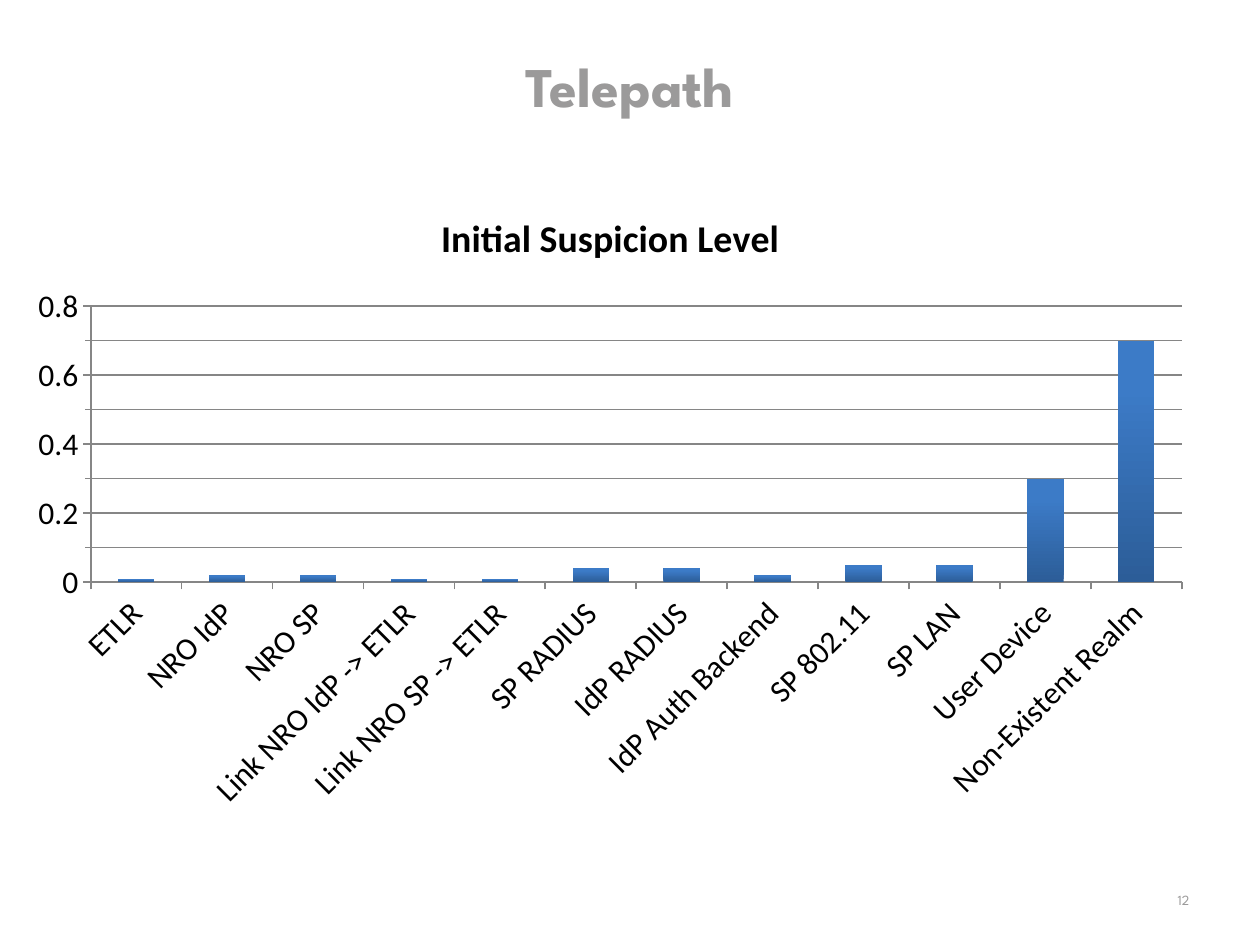
from copy import deepcopy

from lxml import etree
from pptx import Presentation
from pptx.chart.data import CategoryChartData
from pptx.dml.color import RGBColor
from pptx.enum.chart import XL_CHART_TYPE, XL_TICK_MARK
from pptx.enum.text import MSO_ANCHOR, PP_ALIGN
from pptx.oxml.ns import qn
from pptx.util import Inches, Pt

STACKED = XL_CHART_TYPE.COLUMN_STACKED
OUTSIDE = XL_TICK_MARK.OUTSIDE
MIDDLE = MSO_ANCHOR.MIDDLE
CENTER, RIGHT = PP_ALIGN.CENTER, PP_ALIGN.RIGHT

GRAY = RGBColor(0x9B, 0x9A, 0x9A)
BLACK = RGBColor(0, 0, 0)
RULE = RGBColor(0x86, 0x86, 0x86)
DARK = RGBColor(0x2C, 0x5D, 0x98)
LIGHT = RGBColor(0x3C, 0x7B, 0xC7)
HEAD_FONT, CHART_FONT = "League Spartan", "Calibri"

CHART_BOX = (0.12, 1.47, 9.45, 5.06)
PLOT_BOX = (0.72, 2.43, 8.66, 2.19)
CAPTION = "Initial Suspicion Level"
LEVELS = {
    "ETLR": 0.01,
    "NRO IdP": 0.02,
    "NRO SP": 0.02,
    "Link NRO IdP -> ETLR": 0.01,
    "Link NRO SP -> ETLR": 0.01,
    "SP RADIUS": 0.04,
    "IdP RADIUS": 0.04,
    "IdP Auth Backend": 0.02,
    "SP 802.11": 0.05,
    "SP LAN": 0.05,
    "User Device": 0.3,
    "Non-Existent Realm": 0.7,
}


def set_font(font, name, size, color, bold=False):
    font.name, font.size, font.bold = name, Pt(size), bold
    font.color.rgb = color


def add_text(slide, text, box, *, size, align, bold=False):
    frame = slide.shapes.add_textbox(*map(Inches, box)).text_frame
    frame.word_wrap = True
    frame.vertical_anchor = MIDDLE
    para = frame.paragraphs[0]
    para.alignment = align
    run = para.add_run()
    run.text = text
    set_font(run.font, HEAD_FONT, size, GRAY, bold)


def set_line(line):
    line.color.rgb = RULE
    line.width = Pt(1)


def place_plot(chart):
    """Fix the inner plot area, in fractions of the chart."""
    left, top, width, height = CHART_BOX
    x, y, w, h = PLOT_BOX
    values = {
        "layoutTarget": "inner", "xMode": "edge", "yMode": "edge",
        "x": (x - left) / width, "y": (y - top) / height,
        "w": w / width, "h": h / height,
    }
    area = chart._chartSpace.chart.plotArea
    for old in area.findall(qn("c:layout")):
        area.remove(old)
    layout = etree.Element(qn("c:layout"))
    manual = etree.SubElement(layout, qn("c:manualLayout"))
    for tag, value in values.items():
        etree.SubElement(manual, qn("c:" + tag)).set("val", str(value))
    area.insert(0, layout)


def add_grid(axis):
    """Draw major gridlines, and minor ones in the same style but thinner."""
    axis.has_major_gridlines = axis.has_minor_gridlines = True
    set_line(axis.major_gridlines.format.line)
    major = axis._element.find(qn("c:majorGridlines"))
    minor = axis._element.find(qn("c:minorGridlines"))
    style = deepcopy(major.find(qn("c:spPr")))
    style.find(qn("a:ln")).set("w", str(Pt(0.5)))
    minor.append(style)


def style_axes(chart):
    names, scale = chart.category_axis, chart.value_axis
    for axis in (names, scale):
        axis.major_tick_mark = OUTSIDE
        set_line(axis.format.line)
        set_font(axis.tick_labels.font, CHART_FONT, 18, BLACK)
    names._element.txPr.bodyPr.set("rot", "-2700000")

    scale.minimum_scale, scale.maximum_scale = 0, 0.8
    scale.major_unit, scale.minor_unit = 0.2, 0.1
    scale.minor_tick_mark = OUTSIDE
    add_grid(scale)


def style_bars(plot):
    plot.gap_width, plot.overlap = 150, 100
    plot.vary_by_categories = False
    fill = plot.series[0].format.fill
    fill.gradient()
    fill.gradient_angle = 90
    low, high = fill.gradient_stops
    low.color.rgb, low.position = DARK, 0
    high.color.rgb, high.position = LIGHT, 0.8


def add_levels(slide):
    data = CategoryChartData()
    data.categories = LEVELS.keys()
    data.add_series(CAPTION, LEVELS.values())
    box = map(Inches, CHART_BOX)
    chart = slide.shapes.add_chart(STACKED, *box, data).chart
    set_font(chart.font, CHART_FONT, 18, BLACK)
    chart.has_legend = False
    chart.has_title = True
    title = chart.chart_title
    title.include_in_layout = False
    title.text_frame.text = CAPTION
    run = title.text_frame.paragraphs[0].runs[0]
    set_font(run.font, CHART_FONT, 21.6, BLACK, True)
    place_plot(chart)
    style_axes(chart)
    style_bars(chart.plots[0])


def main():
    deck = Presentation()
    deck.slide_width, deck.slide_height = Inches(10), Inches(7.5)
    slide = deck.slides.add_slide(deck.slide_layouts[6])
    add_text(slide, "Telepath", (0.5, 0.05, 9, 1.25),
             size=32, align=CENTER, bold=True)
    add_text(slide, "12", (7.21, 6.94, 2.33, 0.4), size=8, align=RIGHT)
    add_levels(slide)
    deck.save("out.pptx")


if __name__ == "__main__":
    main()
